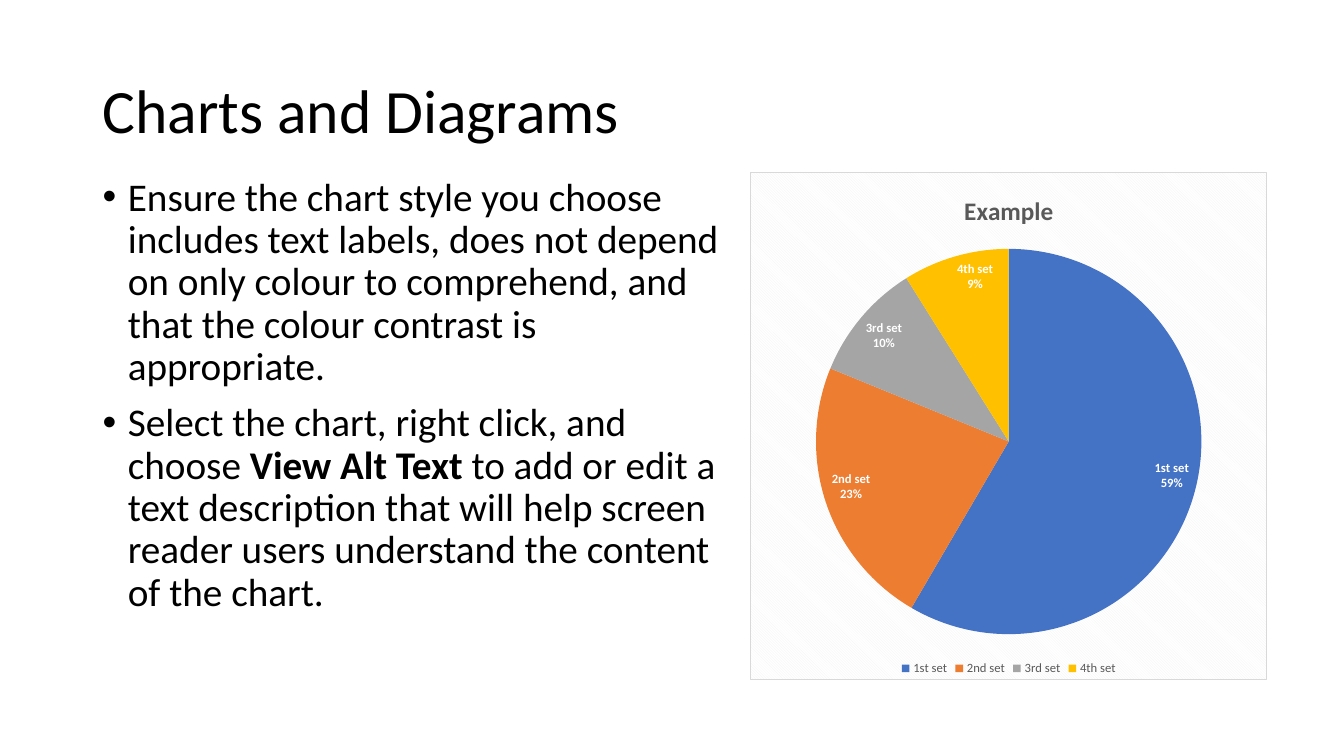
"""Build a slide on charts and diagrams with bullets and a labelled pie chart."""
import pptx
import pptx.chart.data
import pptx.dml.color
import pptx.enum.chart
import pptx.enum.text
import pptx.oxml
import pptx.oxml.ns
import pptx.util

Inches, Pt = pptx.util.Inches, pptx.util.Pt
HEX = {"black": "000000", "grey": "595959", "white": "FFFFFF",
       "edge": "D9D9D9", "hatch": "F2F2F2"}
SLICES = [("1st set", 59, "4472C4"), ("2nd set", 23, "ED7D31"),
          ("3rd set", 10, "A5A5A5"), ("4th set", 9, "FFC000")]
qn = pptx.oxml.ns.qn


def style(font, size, color, bold=False):
    font.name, font.size, font.bold = "Calibri", Pt(size), bold
    font.color.rgb = pptx.dml.color.RGBColor.from_string(color)


def write(text, box, size=28, anchor="TOP", bullet=False, before=0):
    frame = deck_slide.shapes.add_textbox(*map(Inches, box)).text_frame
    frame.word_wrap = True
    frame.vertical_anchor = getattr(pptx.enum.text.MSO_ANCHOR, anchor)
    for i, runs in enumerate(text):
        para = frame.add_paragraph() if i else frame.paragraphs[0]
        para.line_spacing, para.space_before = 0.9, Pt(before)
        for words, bold in runs:
            run = para.add_run()
            run.text = words
            style(run.font, size, HEX["black"], bold)
        if bullet:
            props = para._p.get_or_add_pPr()
            props.set("marL", str(Inches(0.25)))
            props.set("indent", str(Inches(-0.25)))
            for tag, key, val in (("a:buFont", "typeface", "Arial"),
                                  ("a:buChar", "char", "•")):
                mark = pptx.oxml.parse_xml(
                    f'<{tag} {pptx.oxml.ns.nsdecls("a")} {key}="{val}"/>')
                props.append(mark)


deck = pptx.Presentation()
deck.slide_width, deck.slide_height = Inches(13.33), Inches(7.5)
deck_slide = deck.slides.add_slide(deck.slide_layouts[6])

write([[("Charts and Diagrams", False)]], (0.92, 0.4, 11.5, 1.45),
      size=44, anchor="MIDDLE")
write([[("Ensure the chart style you choose includes text labels, does not "
         "depend on only colour to comprehend, and that the colour contrast "
         "is appropriate.", False)],
       [("Select the chart, right click, and choose ", False),
        ("View Alt Text", True),
        (" to add or edit a text description that will help screen reader "
         "users understand the content of the chart.", False)]],
      (0.92, 1.71, 6.34, 5.04), bullet=True, before=10)

data = pptx.chart.data.CategoryChartData()
data.categories = [name for name, _, _ in SLICES]
data.add_series("Series 1", [share for _, share, _ in SLICES])
chart = deck_slide.shapes.add_chart(
    pptx.enum.chart.XL_CHART_TYPE.PIE, Inches(7.44), Inches(1.71),
    Inches(5.13), Inches(5.04), data).chart
style(chart.font, 10, HEX["black"])

chart.has_title = True
title = chart.chart_title.text_frame
title.text = "Example"
style(title.paragraphs[0].runs[0].font, 18, HEX["grey"], True)

chart.has_legend = True
chart.legend.position = pptx.enum.chart.XL_LEGEND_POSITION.BOTTOM
chart.legend.include_in_layout = False
style(chart.legend.font, 9, HEX["grey"])

pie = chart.plots[0]
pie.vary_by_categories = True
for i, (_, _, color) in enumerate(SLICES):
    point = pie.series[0].points[i].format
    point.fill.solid()
    point.fill.fore_color.rgb = pptx.dml.color.RGBColor.from_string(color)
    point.line.fill.background()

labels = pie.series[0].data_labels
labels.show_category_name = labels.show_value = True
labels.show_percentage = False
labels.number_format, labels.number_format_is_linked = '0"%"', False
labels.position = pptx.enum.chart.XL_LABEL_POSITION.INSIDE_END
style(labels.font, 9, HEX["white"], True)
names = pptx.oxml.ns.nsdecls("c", "a")
gap = pptx.oxml.parse_xml(f"<c:separator {names}>\n</c:separator>")
labels._element.find(qn("c:showBubbleSize")).addnext(gap)

body = chart._chartSpace.find(qn("c:chart"))
body.addprevious(pptx.oxml.parse_xml(f'<c:roundedCorners {names} val="0"/>'))
body.addnext(pptx.oxml.parse_xml(
    f'<c:spPr {names}><a:pattFill prst="dkDnDiag">'
    f'<a:fgClr><a:srgbClr val="{HEX["hatch"]}"/></a:fgClr>'
    f'<a:bgClr><a:srgbClr val="{HEX["white"]}"/></a:bgClr></a:pattFill>'
    f'<a:ln w="{Pt(0.75)}"><a:solidFill><a:srgbClr val="{HEX["edge"]}"/>'
    '</a:solidFill></a:ln></c:spPr>'))

area = body.find(qn("c:plotArea"))
for old in area.findall(qn("c:layout")):
    area.remove(old)
sides = "".join(f'<c:{key} val="{val}"/>' for key, val in (
    ("layoutTarget", "inner"), ("xMode", "edge"), ("yMode", "edge"),
    ("x", 0.12), ("y", 0.15), ("w", 0.76), ("h", 0.76)))
area.insert(0, pptx.oxml.parse_xml(
    f"<c:layout {names}><c:manualLayout>{sides}</c:manualLayout></c:layout>"))

deck.save("out.pptx")
